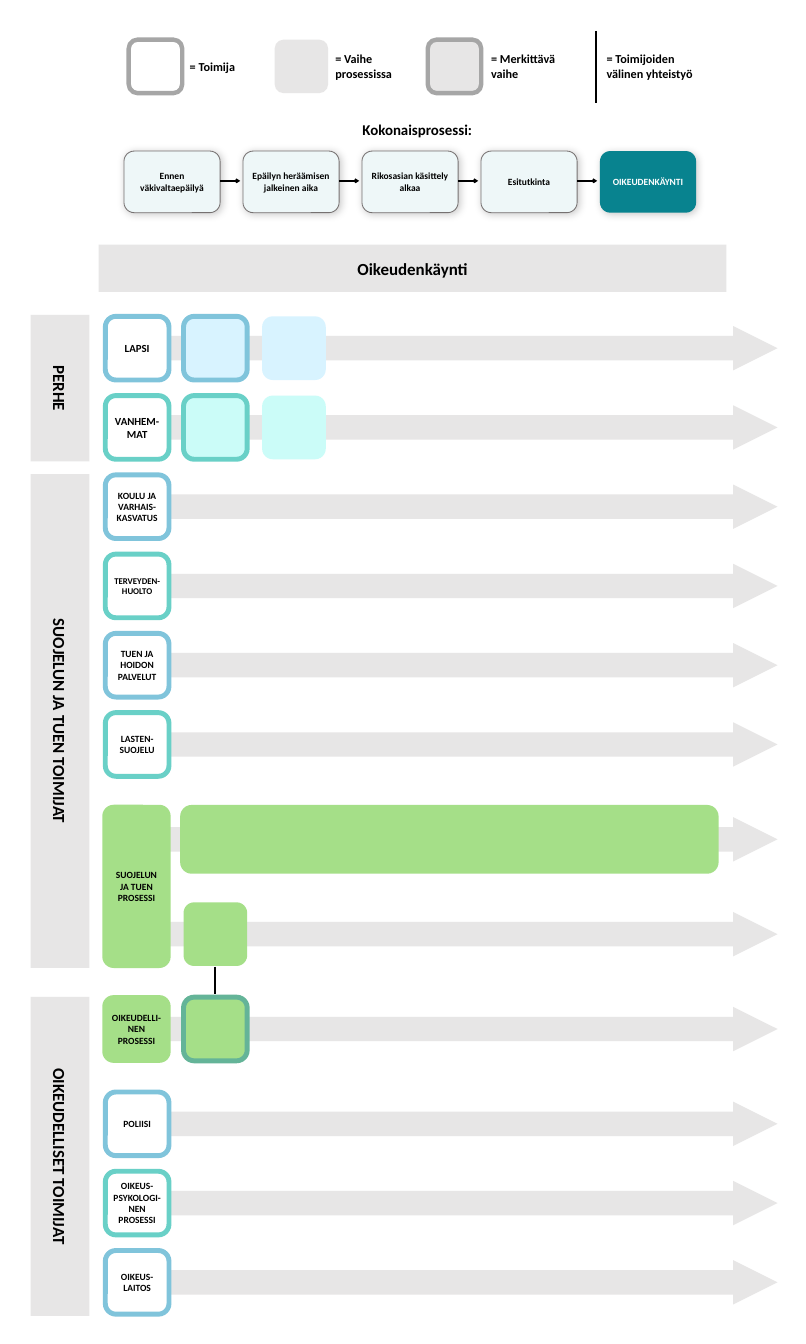
from itertools import accumulate

from lxml.etree import SubElement
from pptx import Presentation
from pptx.dml.color import RGBColor
from pptx.enum.shapes import MSO_CONNECTOR, MSO_SHAPE
from pptx.enum.text import MSO_ANCHOR as Anchor, MSO_AUTO_SIZE as AutoSize, PP_ALIGN as Align
from pptx.oxml.ns import qn
from pptx.util import Pt

BLACK = RGBColor(0x00, 0x00, 0x00)
WHITE = RGBColor(0xFF, 0xFF, 0xFF)
GREY = RGBColor(0xE7, 0xE6, 0xE6)
LEGEND_LINE = RGBColor(0xA6, 0xA6, 0xA6)
STAGE_FILL = RGBColor(0xEE, 0xF7, 0xF8)
STAGE_LINE = RGBColor(0x76, 0x71, 0x71)
TEAL = RGBColor(0x08, 0x83, 0x8F)
BLUE = RGBColor(0x80, 0xC4, 0xDB)
PALE_BLUE = RGBColor(0xD8, 0xF3, 0xFF)
MINT = RGBColor(0x69, 0xD0, 0xC7)
PALE_MINT = RGBColor(0xCB, 0xFC, 0xF8)
GREEN = RGBColor(0xA5, 0xDF, 0x88)
DARK_GREEN = RGBColor(0x64, 0xB4, 0x98)

FONT = "Calibri"
BOX = 94        # side of an actor or phase box
THICK = 7.25    # outline of actors and significant phases
ACTOR_X, SIGNIFICANT_X, PHASE_X = 155.5, 271, 387

# Lane centres: wider gaps around the shared processes
LANES = list(accumulate([514] + [117] * 5 + [140] * 4 + [117] * 2))

STAGES = ["Ennen väkivaltaepäilyä", "Epäilyn heräämisen jalkeinen aika",
          "Rikosasian käsittely alkaa", "Esitutkinta", "OIKEUDENKÄYNTI"]

# Lane number, name, text size
ACTORS = [
    (0, "LAPSI", 16), (1, "VANHEM-MAT", 16),
    (2, "KOULU JA VARHAIS-KASVATUS", 14), (3, "TERVEYDEN-HUOLTO", 13),
    (4, "TUEN JA HOIDON PALVELUT", 14), (5, "LASTEN-SUOJELU", 14),
    (9, "POLIISI", 14), (10, "OIKEUS-PSYKOLOGI-NEN PROSESSI", 14),
    (11, "OIKEUS-LAITOS", 14),
]

# Name, centre, length
GROUPS = [("PERHE", 573, 216), ("SUOJELUN JA TUEN TOIMIJAT", 1064.5, 729),
          ("OIKEUDELLISET TOIMIJAT", 1707, 471)]

# Text, left, top, width, height
LEGEND = [("= Toimija", 273, 83.5, 101, 29), ("= Vaihe prosessissa", 488, 72, 122, 51),
          ("= Merkittävä vaihe", 718, 72, 132, 51),
          ("= Toimijoiden välinen yhteistyö", 888.5, 72, 166, 51)]


def write_text(shape, text, size, color=BLACK, align=Align.CENTER, inset=5):
    frame = shape.text_frame
    frame.text = text
    frame.word_wrap = True
    frame.auto_size = AutoSize.NONE
    frame.vertical_anchor = Anchor.MIDDLE
    frame.margin_left = frame.margin_right = Pt(inset)
    for paragraph in frame.paragraphs:
        paragraph.alignment = align
        for run in paragraph.runs:
            font = run.font
            font.name, font.size, font.bold = FONT, Pt(size), True
            font.color.rgb = color


def add_box(slide, left, top, width, height, fill, line=None, line_width=THICK,
            kind=MSO_SHAPE.ROUNDED_RECTANGLE):
    shape = slide.shapes.add_shape(kind, Pt(left), Pt(top), Pt(width), Pt(height))
    shape.shadow.inherit = False
    shape.fill.solid()
    shape.fill.fore_color.rgb = fill
    if line is None:
        shape.line.fill.background()
    else:
        shape.line.color.rgb = line
        shape.line.width = Pt(line_width)
    return shape


def add_lane_box(slide, left, lane, fill, line=None, width=BOX, height=BOX):
    return add_box(slide, left, LANES[lane] - height / 2, width, height, fill, line)


def add_line(slide, x1, y1, x2, y2, width, arrow=False):
    connector = slide.shapes.add_connector(
        MSO_CONNECTOR.STRAIGHT, Pt(x1), Pt(y1), Pt(x2), Pt(y2))
    connector.line.color.rgb = BLACK
    connector.line.width = Pt(width)
    properties = connector._element.spPr
    if arrow:
        SubElement(properties.find(qn("a:ln")), qn("a:tailEnd"), type="arrow")
    SubElement(properties, qn("a:effectLst"))


def add_soft_shadow(shape):
    effects = shape._element.spPr.find(qn("a:effectLst"))
    shadow = SubElement(effects, qn("a:outerShdw"), blurRad=str(Pt(12)), dist=str(Pt(3)),
                        dir="2700000", algn="tl", rotWithShape="0")
    color = SubElement(shadow, qn("a:srgbClr"), val=str(BLACK))
    SubElement(color, qn("a:alpha"), val="20000")


def add_lane_arrow(slide, center):
    arrow = add_box(slide, 160, center - 32.75, 988, 65.5, GREY, kind=MSO_SHAPE.RIGHT_ARROW)
    arrow.adjustments[0] = 0.55
    arrow.adjustments[1] = 1


def add_group(slide, name, center, length):
    thickness = 87
    shape = add_box(slide, 88.5 - length / 2, center - thickness / 2, length, thickness,
                    GREY, kind=MSO_SHAPE.RECTANGLE)
    shape.rotation = 90
    write_text(shape, name, 25)


def add_label(slide, text, left, top, width, height, size, align=Align.LEFT):
    box = slide.shapes.add_textbox(Pt(left), Pt(top), Pt(width), Pt(height))
    write_text(box, text, size, align=align, inset=7.2)


def add_legend(slide):
    for left, fill, line in ((190, WHITE, LEGEND_LINE), (405.5, GREY, None),
                             (631.5, GREY, LEGEND_LINE)):
        add_box(slide, left, 58.5, 79, 79, fill, line, 6.5)
    add_line(slide, 880, 45.5, 880, 152.5, 2.5)
    for text, left, top, width, height in LEGEND:
        add_label(slide, text, left, top, width, height, 18)


def add_stages(slide):
    add_label(slide, "Kokonaisprosessi:", 514, 173.5, 204, 34, 22, Align.CENTER)
    width, pitch = 142, 175.7
    for index, name in enumerate(STAGES):
        left = 183 + index * pitch
        current = index == len(STAGES) - 1
        shape = add_box(slide, left, 223, width, 91, TEAL if current else STAGE_FILL,
                        None if current else STAGE_LINE, 1.25)
        add_soft_shadow(shape)
        write_text(shape, name, 14, WHITE if current else BLACK)
        if not current:
            add_line(slide, left + width, 267, left + pitch - 4, 267, 2, arrow=True)


def add_title(slide, text):
    title = slide.shapes.title
    title.left, title.top, title.width, title.height = Pt(145.5), Pt(361), Pt(927), Pt(70)
    title.fill.solid()
    title.fill.fore_color.rgb = GREY
    write_text(title, text, 25)


def add_phases(slide):
    for lane, fill, line in ((0, PALE_BLUE, BLUE), (1, PALE_MINT, MINT)):
        add_lane_box(slide, SIGNIFICANT_X, lane, fill, line)
        add_lane_box(slide, PHASE_X, lane, fill)
    add_lane_box(slide, 266, 6, GREEN, width=795, height=101.5)
    add_lane_box(slide, SIGNIFICANT_X, 7, GREEN)
    add_lane_box(slide, SIGNIFICANT_X, 8, GREEN, DARK_GREEN)
    add_line(slide, 317, LANES[7] + 48, 317, LANES[8] - 52, 2.5)


def add_actors(slide):
    for index, (lane, name, size) in enumerate(ACTORS):
        shape = add_lane_box(slide, ACTOR_X, lane, WHITE, MINT if index % 2 else BLUE)
        write_text(shape, name, size)
    support = add_box(slide, 151, 1188, 101, 241, GREEN)
    write_text(support, "SUOJELUN\vJA TUEN PROSESSI", 14)
    legal = add_lane_box(slide, 151, 8, GREEN, width=101, height=100)
    write_text(legal, "OIKEUDELLI-NEN PROSESSI", 14)


def main():
    presentation = Presentation()
    presentation.slide_width, presentation.slide_height = Pt(1190), Pt(1984)
    slide = presentation.slides.add_slide(presentation.slide_layouts[5])

    # Heading area
    add_title(slide, "Oikeudenkäynti")
    add_legend(slide)
    add_stages(slide)

    # Swimlanes
    for center in LANES:
        add_lane_arrow(slide, center)
    for name, center, length in GROUPS:
        add_group(slide, name, center, length)
    add_phases(slide)
    add_actors(slide)

    presentation.save("out.pptx")


if __name__ == "__main__":
    main()
